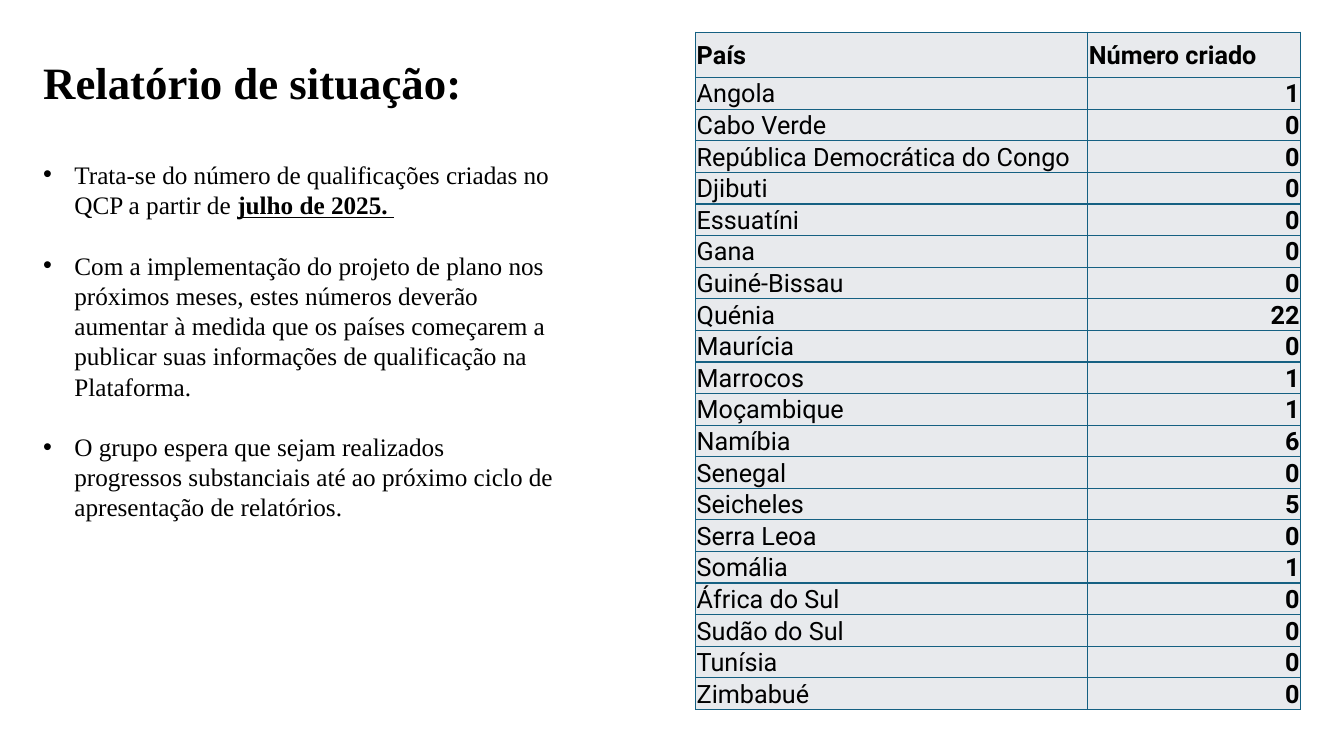
"""Build the status report slide with notes and a table of qualifications per country."""
from lxml import etree
from pptx import Presentation
from pptx import util as u
from pptx.dml.color import RGBColor
from pptx.enum import text
from pptx.oxml.ns import qn

C = {"ink": "000000", "cell": "E8EAED", "border": "156082"}
SERIF, SANS = "Times New Roman", "Roboto"
MARGIN, TOP = 0.33, 0.32
TABLE_H, HEAD_H = 6.72, 0.45
COLS = [3.89, 2.11]

notes = [
    [("Trata-se do número de qualificações criadas no QCP a partir de ", False),
     ("julho de 2025. ", True)],
    [("Com a implementação do projeto de plano nos próximos meses, estes números "
      "deverão aumentar à medida que os países começarem a publicar suas informações "
      "de qualificação na Plataforma.", False)],
    [("O grupo espera que sejam realizados progressos substanciais até ao próximo "
      "ciclo de apresentação de relatórios.", False)],
]
rows = [
    ("País", "Número criado"), ("Angola", 1), ("Cabo Verde", 0),
    ("República Democrática do Congo", 0), ("Djibuti", 0), ("Essuatíni", 0),
    ("Gana", 0), ("Guiné-Bissau", 0), ("Quénia", 22), ("Maurícia", 0),
    ("Marrocos", 1), ("Moçambique", 1), ("Namíbia", 6), ("Senegal", 0),
    ("Seicheles", 5), ("Serra Leoa", 0), ("Somália", 1), ("África do Sul", 0),
    ("Sudão do Sul", 0), ("Tunísia", 0), ("Zimbabué", 0),
]


def style(r, name, size, bold=False):
    r.font.name, r.font.size, r.font.bold = name, u.Pt(size), bold
    r.font.color.rgb = RGBColor.from_string(C["ink"])


def add_borders(cell):
    tcPr = cell._tc.get_or_add_tcPr()
    for i, side in enumerate(("lnL", "lnR", "lnT", "lnB")):
        ln = etree.Element(qn("a:" + side), w=str(u.Pt(1)))
        fill = etree.SubElement(ln, qn("a:solidFill"))
        etree.SubElement(fill, qn("a:srgbClr"), val=C["border"])
        tcPr.insert(i, ln)


prs = Presentation()
prs.slide_width, prs.slide_height = u.Inches(13.33), u.Inches(7.5)
s = prs.slides.add_slide(prs.slide_layouts[6])

sp = s.shapes.add_textbox(u.Inches(MARGIN), u.Inches(TOP), u.Inches(4.52), u.Inches(1.05))
tf = sp.text_frame
tf.word_wrap = True
tf.vertical_anchor = text.MSO_ANCHOR.MIDDLE
tf.text = "Relatório de situação:"
tf.paragraphs[0].line_spacing = 0.9
style(tf.paragraphs[0].runs[0], SERIF, 32, True)

tbl = s.shapes.add_table(len(rows), len(COLS), u.Inches(6.9), u.Inches(TOP),
                         u.Inches(sum(COLS)), u.Inches(TABLE_H)).table
tbl.horz_banding = False
for column, width in zip(tbl.columns, COLS):
    column.width = u.Inches(width)
for i, values in enumerate(rows):
    tbl.rows[i].height = u.Inches((TABLE_H - HEAD_H) / (len(rows) - 1) if i else HEAD_H)
    for j, value in enumerate(values):
        cell = tbl.cell(i, j)
        cell.margin_left = cell.margin_right = cell.margin_top = u.Inches(0.01)
        cell.margin_bottom = 0
        cell.vertical_anchor = text.MSO_ANCHOR.BOTTOM if i else text.MSO_ANCHOR.MIDDLE
        cell.fill.solid()
        cell.fill.fore_color.rgb = RGBColor.from_string(C["cell"])
        add_borders(cell)
        cell.text_frame.text = str(value)
        p = cell.text_frame.paragraphs[0]
        p.alignment = text.PP_ALIGN.RIGHT if i and j else text.PP_ALIGN.LEFT
        style(p.runs[0], SANS, 18, i == 0 or j == 1)

sp = s.shapes.add_textbox(u.Inches(MARGIN), u.Inches(1.53), u.Inches(5.3), u.Inches(4.04))
tf = sp.text_frame
tf.word_wrap = True
for i, parts in enumerate(notes):
    p = tf.add_paragraph() if i else tf.paragraphs[0]
    p.space_before = u.Pt(21.6 if i else 0)
    pPr = p._p.get_or_add_pPr()
    pPr.set("marL", str(u.Inches(0.31)))
    pPr.set("indent", str(-u.Inches(0.31)))
    etree.SubElement(pPr, qn("a:buFont"), typeface="Arial")
    etree.SubElement(pPr, qn("a:buChar"), char="•")
    for words, strong in parts:
        r = p.add_run()
        r.text = words
        style(r, SERIF, 18, strong)
        r.font.underline = strong

prs.save("out.pptx")
